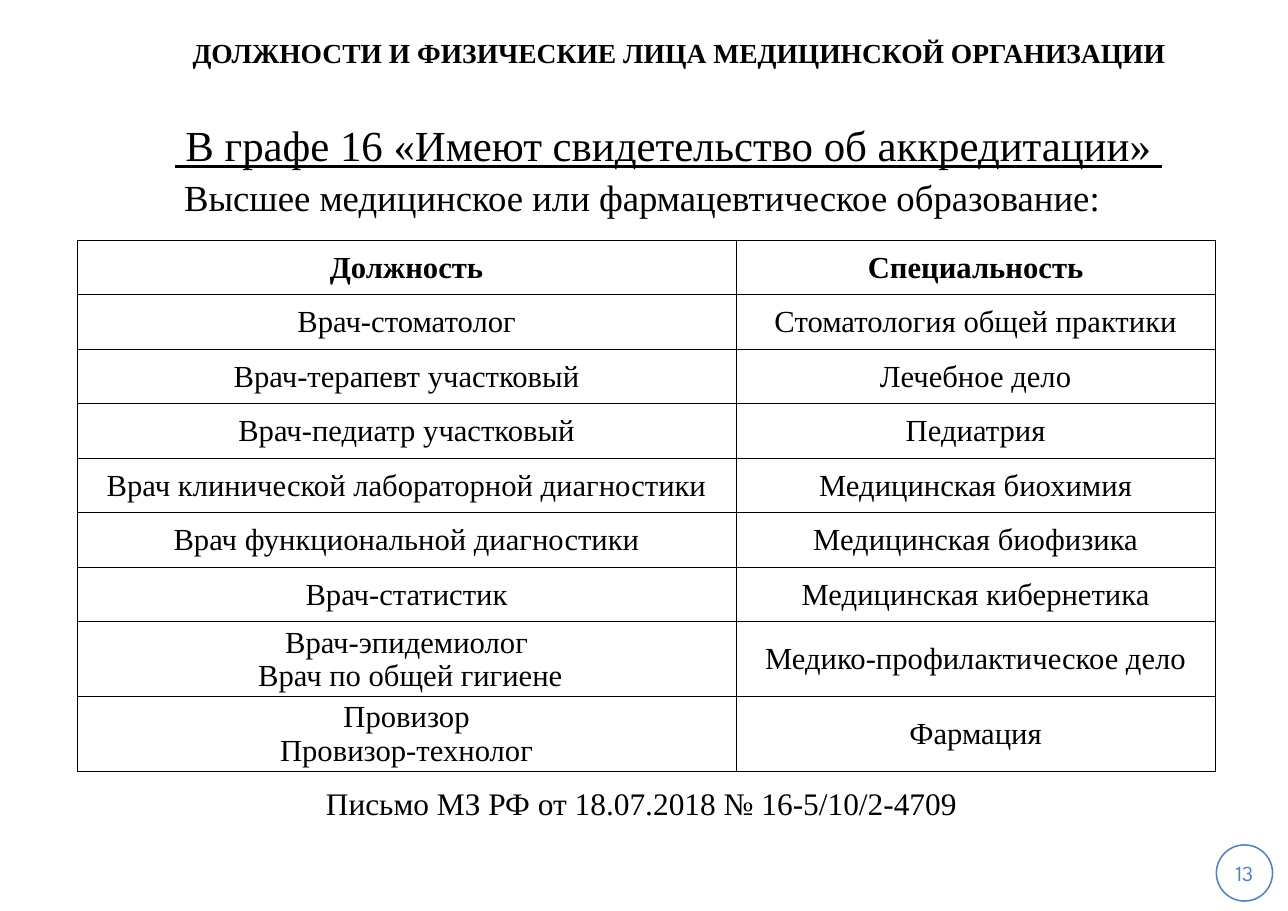
from dataclasses import dataclass
from lxml.etree import SubElement
from pptx import Presentation
from pptx.dml.color import RGBColor
from pptx.enum.shapes import MSO_SHAPE
from pptx.enum.text import MSO_ANCHOR, MSO_AUTO_SIZE, PP_ALIGN
from pptx.oxml.ns import qn
from pptx.util import Pt

PX = 4572


@dataclass
class Theme:
    ink = RGBColor(0x00, 0x00, 0x00)
    accent = RGBColor(0x4F, 0x81, 0xBD)
    serif = "Times New Roman"
    number_font = "League Spartan"
    title_size = 18
    heading_size = 28
    subheading_size = 24
    table_size = 20
    source_size = 20.5
    number_size = 14
    border = 0.5


def px(*lengths):
    return [length * PX for length in lengths]


def style(paragraph, size, align=PP_ALIGN.CENTER, bold=False, underline=False,
          font=Theme.serif, color=Theme.ink):
    paragraph.alignment = align
    for run in paragraph.runs:
        run.font.name = font
        run.font.size = Pt(size)
        run.font.bold = bold
        run.font.underline = underline
        run.font.color.rgb = color


presentation = Presentation()
presentation.slide_width, presentation.slide_height = px(2338, 1654)
slide = presentation.slides.add_slide(presentation.slide_layouts[5])

title = slide.shapes.title
title.left, title.top, title.width, title.height = px(146, 0, 2194, 190)
title_frame = title.text_frame
title_frame.text = "ДОЛЖНОСТИ И ФИЗИЧЕСКИЕ ЛИЦА МЕДИЦИНСКОЙ ОРГАНИЗАЦИИ"
title_frame.auto_size = MSO_AUTO_SIZE.NONE
title_frame.vertical_anchor = MSO_ANCHOR.MIDDLE
title_frame.margin_left, title_frame.margin_right = px(0, 20)
style(title_frame.paragraphs[0], Theme.title_size, bold=True)

heading = slide.shapes.add_textbox(*px(76, 206, 2196, 196)).text_frame
heading.word_wrap = True
column_name = heading.paragraphs[0]
column_name.text = " В графе 16 «Имеют свидетельство об аккредитации» "
column_name._p.get_or_add_pPr().set("marL", str(78 * PX))
style(column_name, Theme.heading_size, underline=True)
education = heading.add_paragraph()
education.text = "Высшее медицинское или фармацевтическое образование: "
education.space_before = Pt(3)
style(education, Theme.subheading_size)

positions = [
    ("Должность", "Специальность"),
    ("Врач-стоматолог", "Стоматология общей практики"),
    ("Врач-терапевт участковый", "Лечебное дело"),
    ("Врач-педиатр участковый", "Педиатрия"),
    ("Врач клинической лабораторной диагностики", "Медицинская биохимия"),
    ("Врач функциональной диагностики", "Медицинская биофизика"),
    ("Врач-статистик", "Медицинская кибернетика"),
    ("Врач-эпидемиолог\n Врач по общей гигиене", "Медико-профилактическое дело"),
    ("Провизор\nПровизор-технолог", "Фармация"),
]
row_heights = [135 if "\n" in position else 99 for position, specialty in positions]
column_widths = [1196, 870]
table = slide.shapes.add_table(
    len(positions), 2, *px(140, 436, sum(column_widths), sum(row_heights))).table
table.first_row = False
table.horz_banding = False
for column, width in zip(table.columns, column_widths):
    column.width = width * PX
for row, height, names in zip(table.rows, row_heights, positions):
    row.height = height * PX
    for cell, name in zip(row.cells, names):
        cell.text_frame.text = name
        cell.vertical_anchor = MSO_ANCHOR.MIDDLE
        cell.margin_left, cell.margin_top, cell.margin_right, cell.margin_bottom = px(2, 2, 2, 0)
        for paragraph in cell.text_frame.paragraphs:
            style(paragraph, Theme.table_size, bold=names == positions[0])
        properties = cell._tc.get_or_add_tcPr()
        for side in ("a:lnL", "a:lnR", "a:lnT", "a:lnB"):
            border = SubElement(properties, qn(side), w=str(Pt(Theme.border)))
            fill = SubElement(border, qn("a:solidFill"))
            SubElement(fill, qn("a:srgbClr"), val=str(Theme.ink))
        cell.fill.background()

source = slide.shapes.add_textbox(*px(572, 1414, 1200, 90)).text_frame
source.word_wrap = True
source.text = "Письмо МЗ РФ от 18.07.2018 № 16-5/10/2-4709"
style(source.paragraphs[0], Theme.source_size, align=PP_ALIGN.LEFT)

page_number = slide.shapes.add_shape(MSO_SHAPE.OVAL, *px(2208, 1534, 102, 102))
page_number.shadow.inherit = False
page_number.fill.background()
page_number.line.color.rgb = Theme.accent
page_number.line.width = Pt(1)
number_frame = page_number.text_frame
number_frame.text = "13"
number_frame.vertical_anchor = MSO_ANCHOR.MIDDLE
number_frame.margin_left = number_frame.margin_right = 0
number_frame.margin_top = number_frame.margin_bottom = 0
style(number_frame.paragraphs[0], Theme.number_size,
      font=Theme.number_font, color=Theme.accent)

presentation.save("out.pptx")
